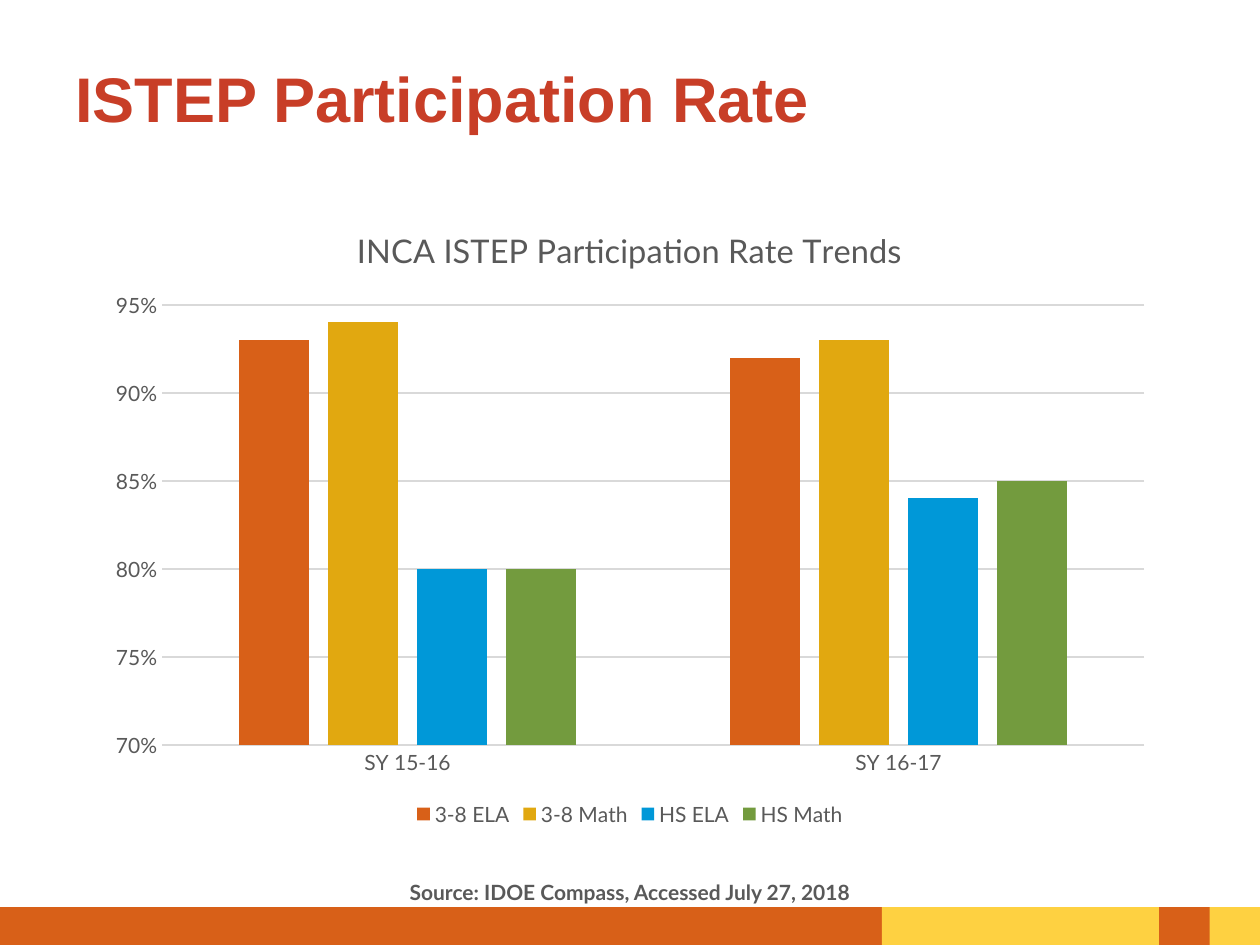
"""Build the ISTEP participation rate slide with a clustered column chart."""
from pptx import Presentation
from pptx.chart.data import CategoryChartData
from pptx.dml.color import RGBColor
from pptx.enum.chart import XL_CHART_TYPE, XL_LEGEND_POSITION, XL_TICK_MARK
from pptx.enum.shapes import MSO_SHAPE
from pptx.enum.text import MSO_ANCHOR, PP_ALIGN
from pptx.util import Pt

PX = 9144
GREY, GRID, ORANGE, YELLOW = "595959", "D9D9D9", "D86018", "FED141"


def rgb(value):
    return RGBColor.from_string(value)


def style(font, size, color, name="Lato", bold=False):
    font.size, font.name, font.bold = Pt(size), name, bold
    font.color.rgb = rgb(color)


prs = Presentation()
prs.slide_width, prs.slide_height = 1000 * PX, 750 * PX
s = prs.slides.add_slide(prs.slide_layouts[6])

for left, width, color in [(0, 700, ORANGE), (700, 300, YELLOW), (920, 40, ORANGE)]:
    sp = s.shapes.add_shape(MSO_SHAPE.RECTANGLE, left * PX, 720 * PX, width * PX, 30 * PX)
    sp.shadow.inherit = False
    sp.fill.solid()
    sp.fill.fore_color.rgb = rgb(color)
    sp.line.fill.background()

texts = [
    ("ISTEP Participation Rate", (50, 25, 850, 105), 36, "C83E27", "Arial",
     MSO_ANCHOR.MIDDLE, PP_ALIGN.LEFT, 0),
    ("Source: IDOE Compass, Accessed July 27, 2018", (75, 690, 850, 30), 12, GREY, "Lato",
     MSO_ANCHOR.BOTTOM, PP_ALIGN.CENTER, 2),
]
for text, box, size, color, name, anchor, align, inset in texts:
    tf = s.shapes.add_textbox(*(v * PX for v in box)).text_frame
    tf.word_wrap = True
    tf.vertical_anchor = anchor
    tf.margin_left = tf.margin_right = 10 * PX
    tf.margin_top = tf.margin_bottom = inset * PX
    p = tf.paragraphs[0]
    p.alignment = align
    r = p.add_run()
    r.text = text
    style(r.font, size, color, name, True)

series = [
    ("3-8 ELA", (0.93, 0.92), ORANGE),
    ("3-8 Math", (0.94, 0.93), "E1A810"),
    ("HS ELA", (0.80, 0.84), "0098D8"),
    ("HS Math", (0.80, 0.85), "739B3E"),
]
data = CategoryChartData(number_format="0%")
data.categories = ["SY 15-16", "SY 16-17"]
for name, values, color in series:
    data.add_series(name, values)
chart = s.shapes.add_chart(XL_CHART_TYPE.COLUMN_CLUSTERED, 75 * PX, 160 * PX,
                           850 * PX, 500 * PX, data).chart
style(chart.font, 12, GREY)

chart.has_title = True
chart.chart_title.include_in_layout = False
r = chart.chart_title.text_frame.paragraphs[0].add_run()
r.text = "INCA ISTEP Participation Rate Trends"
style(r.font, 18.6, GREY)

chart.has_legend = True
chart.legend.position = XL_LEGEND_POSITION.BOTTOM
chart.legend.include_in_layout = False
style(chart.legend.font, 12, GREY)

plot = chart.plots[0]
plot.gap_width, plot.overlap = 219, -27
plot.vary_by_categories = False
for bars, (name, values, color) in zip(plot.series, series):
    bars.format.fill.solid()
    bars.format.fill.fore_color.rgb = rgb(color)
    bars.invert_if_negative = False

for axis in (chart.category_axis, chart.value_axis):
    axis.major_tick_mark = axis.minor_tick_mark = XL_TICK_MARK.NONE
    style(axis.tick_labels.font, 12, GREY)

value_axis = chart.value_axis
value_axis.minimum_scale, value_axis.maximum_scale, value_axis.major_unit = 0.7, 0.95, 0.05
value_axis.tick_labels.number_format = "0%"
value_axis.tick_labels.number_format_is_linked = False
value_axis.format.line.fill.background()
for line in (chart.category_axis.format.line, value_axis.major_gridlines.format.line):
    line.color.rgb = rgb(GRID)
    line.width = Pt(0.75)

prs.save("out.pptx")
